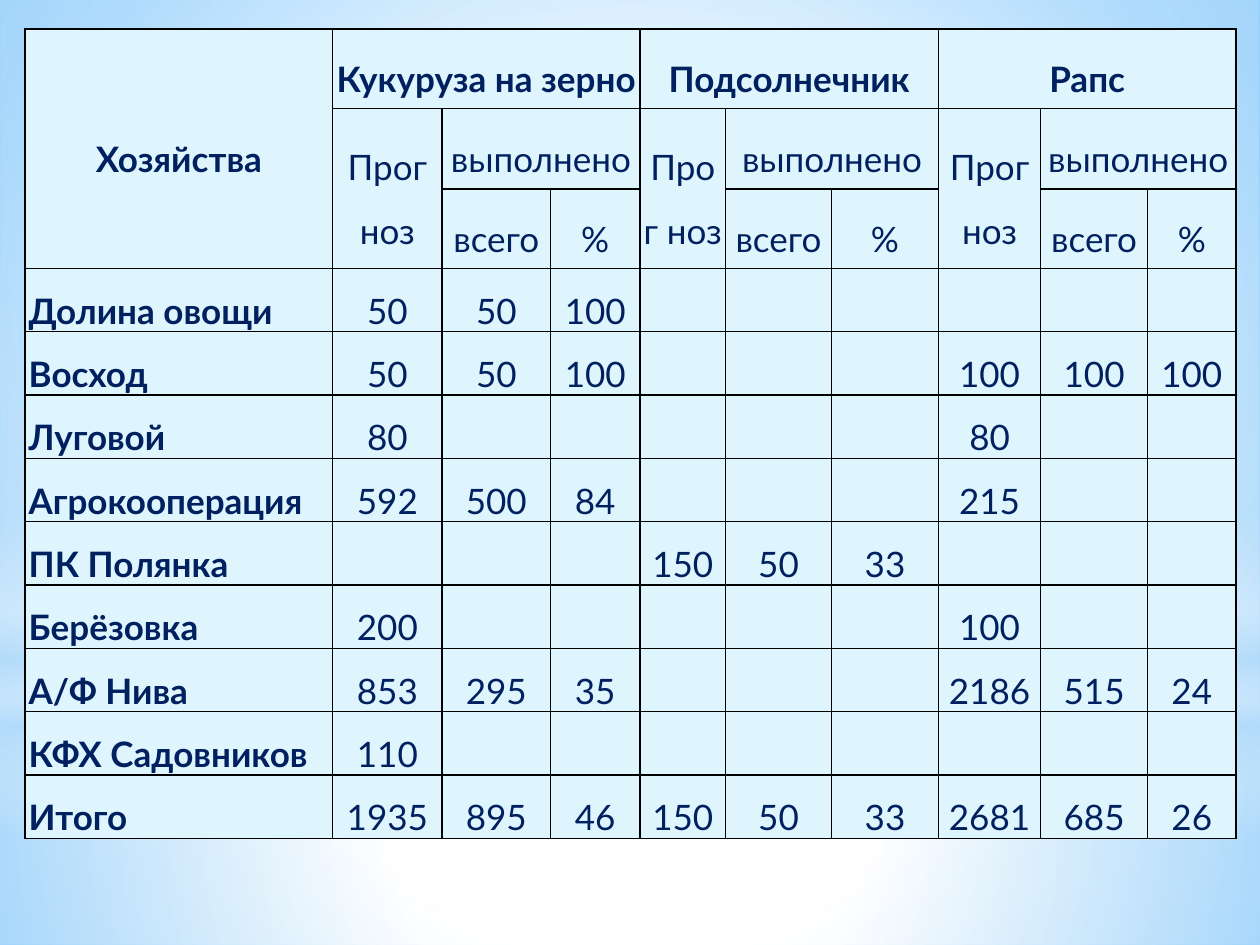
"""Builds the slide with the table of harvest forecasts and results by farm."""
from lxml.etree import SubElement
from pptx import Presentation
from pptx.dml.color import RGBColor
from pptx.enum.shapes import MSO_SHAPE
from pptx.enum.text import MSO_ANCHOR, PP_ALIGN
from pptx.oxml import parse_xml
from pptx.oxml.ns import nsdecls, qn
from pptx.util import Inches, Pt

NAVY = RGBColor(0x00, 0x20, 0x60)
PALE_BLUE = RGBColor(0xDF, 0xF5, 0xFD)
BLACK = RGBColor(0x00, 0x00, 0x00)
WHITE = RGBColor(0xFF, 0xFF, 0xFF)
SKY = RGBColor(0xB4, 0xDC, 0xFA)
BRIGHT_SKY = RGBColor(0x63, 0xBC, 0xFF)


def apply_gradient(owner, fill, stops, center=None):
    fill.solid()
    solid = owner.find(f".//{qn('a:solidFill')}")
    gradient = parse_xml(f'<a:gradFill {nsdecls("a")} rotWithShape="1"><a:gsLst/></a:gradFill>')
    for position, color, opacity in stops:
        stop = SubElement(gradient[0], qn("a:gs"), pos=str(position * 1000))
        tint = SubElement(stop, qn("a:srgbClr"), val=str(color))
        SubElement(tint, qn("a:alpha"), val=str(opacity * 1000))
    if center:
        path = SubElement(gradient, qn("a:path"), path="circle")
        SubElement(path, qn("a:fillToRect"),
                   {side: str(share * 1000) for side, share in zip("ltrb", center)})
    else:
        SubElement(gradient, qn("a:lin"), ang="5400000", scaled="0")
    solid.getparent().replace(solid, gradient)


def write_cell(cell, text, bold=False, align=PP_ALIGN.CENTER, anchor=MSO_ANCHOR.MIDDLE):
    cell.margin_left = cell.margin_right = Pt(2)
    cell.margin_top = cell.margin_bottom = 0
    cell.vertical_anchor = anchor
    paragraph = cell.text_frame.paragraphs[0]
    paragraph.alignment = align
    paragraph.line_spacing = 1.5
    run = paragraph.add_run()
    run.text = text
    run.font.name = "Lato"
    run.font.size = Pt(20)
    run.font.bold = bold
    run.font.color.rgb = NAVY


prs = Presentation()
prs.slide_width, prs.slide_height = Inches(10), Inches(7.5)
slide = prs.slides.add_slide(prs.slide_layouts[6])

apply_gradient(slide.element, slide.background.fill,
               [(0, WHITE, 100), (42, WHITE, 100), (100, BRIGHT_SKY, 100)], (24, 44, 24, 12))

middle = (50, 50, 50, 50)
glows = [
    (MSO_SHAPE.RECTANGLE, 5.58, 1.92, [(0, WHITE, 91), (37, WHITE, 76), (100, SKY, 79)], middle),
    (MSO_SHAPE.RECTANGLE, 0, 5.58, [(0, WHITE, 89), (48, WHITE, 62), (100, SKY, 79)], middle),
    (MSO_SHAPE.RECTANGLE, 4.12, 2.5, [(0, WHITE, 0), (29, WHITE, 30), (45, SKY, 40),
                                      (55, WHITE, 26), (65, SKY, 60), (100, WHITE, 0)], None),
    (MSO_SHAPE.OVAL, 1.75, 5.58, [(0, WHITE, 100), (56, WHITE, 0)], middle),
]
for preset, top, height, stops, center in glows:
    glow = slide.shapes.add_shape(preset, 0, Inches(top), Inches(10), Inches(height))
    glow.shadow.inherit = False
    glow.line.fill.background()
    apply_gradient(glow.element, glow.fill, stops, center)

column_widths = [2.44, 0.87, 0.86, 0.71, 0.68, 0.84, 0.85, 0.81, 0.85, 0.7]
crops = ["Кукуруза на зерно", "Подсолнечник", "Рапс"]
farms = [
    ("Долина овощи", ["50", "50", "100", "", "", "", "", "", ""]),
    ("Восход", ["50", "50", "100", "", "", "", "100", "100", "100"]),
    ("Луговой", ["80", "", "", "", "", "", "80", "", ""]),
    ("Агрокооперация", ["592", "500", "84", "", "", "", "215", "", ""]),
    ("ПК Полянка", ["", "", "", "150", "50", "33", "", "", ""]),
    ("Берёзовка", ["200", "", "", "", "", "", "100", "", ""]),
    ("А/Ф Нива", ["853", "295", "35", "", "", "", "2186", "515", "24"]),
    ("КФХ Садовников", ["110", "", "", "", "", "", "", "", ""]),
    ("Итого", ["1935", "895", "46", "150", "50", "33", "2681", "685", "26"]),
]
row_heights = [0.63, 0.64, 0.63] + [0.5] * len(farms)

harvest = slide.shapes.add_table(len(row_heights), len(column_widths), Inches(0.2), Inches(0.23),
                                 Inches(sum(column_widths)), Inches(sum(row_heights))).table
for column, width in zip(harvest.columns, column_widths):
    column.width = Inches(width)
for row, height in zip(harvest.rows, row_heights):
    row.height = Inches(height)

for cell in harvest.iter_cells():
    properties = cell._tc.get_or_add_tcPr()
    for edge in ("a:lnL", "a:lnR", "a:lnT", "a:lnB"):
        border = SubElement(properties, qn(edge), w=str(Pt(1)))
        SubElement(SubElement(border, qn("a:solidFill")), qn("a:srgbClr"), val=str(BLACK))
    cell.fill.solid()
    cell.fill.fore_color.rgb = PALE_BLUE

harvest.cell(0, 0).merge(harvest.cell(2, 0))
write_cell(harvest.cell(0, 0), "Хозяйства", bold=True)
for index, crop in enumerate(crops):
    first = 1 + 3 * index
    harvest.cell(0, first).merge(harvest.cell(0, first + 2))
    harvest.cell(1, first).merge(harvest.cell(2, first))
    harvest.cell(1, first + 1).merge(harvest.cell(1, first + 2))
    write_cell(harvest.cell(0, first), crop, bold=True)
    write_cell(harvest.cell(1, first), "Прог ноз")
    write_cell(harvest.cell(1, first + 1), "выполнено")
    write_cell(harvest.cell(2, first + 1), "всего")
    write_cell(harvest.cell(2, first + 2), "%")

for row_index, (farm, figures) in enumerate(farms, start=3):
    write_cell(harvest.cell(row_index, 0), farm, bold=True,
               align=PP_ALIGN.JUSTIFY, anchor=MSO_ANCHOR.TOP)
    for column_index, figure in enumerate(figures, start=1):
        if figure:
            write_cell(harvest.cell(row_index, column_index), figure)

prs.save("out.pptx")
